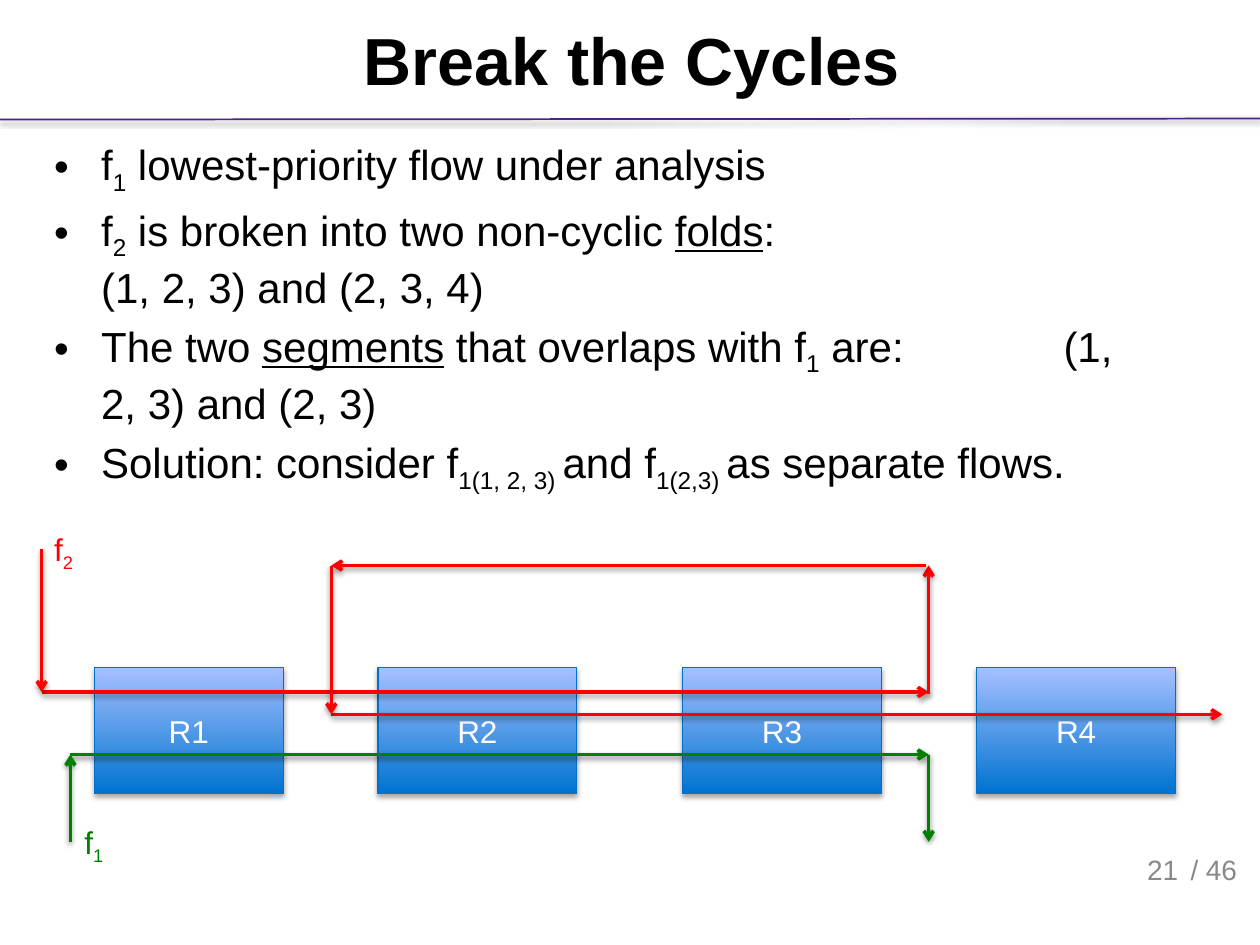
from typing import NamedTuple

from lxml.etree import SubElement
from pptx import Presentation
from pptx.dml.color import RGBColor
from pptx.enum.shapes import MSO_CONNECTOR as Connector, MSO_SHAPE as Shape
from pptx.enum.text import MSO_ANCHOR as Anchor, MSO_AUTO_SIZE as AutoSize, PP_ALIGN as Align
from pptx.oxml.ns import qn
from pptx.util import Cm, Pt

RED, GREEN, BLACK, GREY, WHITE = "FF0000", "008000", "000000", "898989", "FFFFFF"
ROUTER_TOP, ROUTER_HEIGHT = 13.46, 2.54
LEFT_TURN, RIGHT_TURN = 6.68, 18.72
LOOP_TOP, FIRST_PASS, SECOND_PASS = 11.4, 13.95, 14.4
F1_LEVEL, F1_END = 15.21, 16.97
F1_START, F2_START = 1.42, 0.84


class Span(NamedTuple):
    text: str
    sub: bool = False
    underline: bool = False


class Router(NamedTuple):
    name: str
    left: float
    width: float = 4.01


class Arrow(NamedTuple):
    color: str
    x1: float
    y1: float
    x2: float
    y2: float


class Label(NamedTuple):
    spans: list[Span]
    left: float
    top: float
    width: float
    size: int
    color: str
    align: Align = Align.LEFT
    anchor: Anchor = Anchor.TOP
    wrap: bool = True


BULLETS = [
    [Span("f"), Span("1", sub=True), Span(" lowest-priority flow under analysis")],
    [Span("f"), Span("2", sub=True), Span(" is broken into two non-cyclic "),
     Span("folds", underline=True), Span(":"), Span("\n"), Span("(1, 2, 3) and (2, 3, 4)")],
    [Span("The two "), Span("segments", underline=True), Span(" that overlaps with f"),
     Span("1", sub=True), Span(" are:\t(1,"), Span("\n"), Span("2, 3) and (2, 3)")],
    [Span("Solution: consider f"), Span("1(1, 2, 3) ", sub=True), Span("and f"),
     Span("1(2,3) ", sub=True), Span("as separate flows.")],
]
ROUTERS = [Router("R1", 1.9, 3.81), Router("R2", 7.62), Router("R3", 13.76), Router("R4", 19.69)]
ARROWS = [
    Arrow(RED, F2_START, FIRST_PASS, RIGHT_TURN, FIRST_PASS),
    Arrow(RED, F2_START, 11.07, F2_START, FIRST_PASS),
    Arrow(RED, RIGHT_TURN, 14, RIGHT_TURN, LOOP_TOP),
    Arrow(GREEN, F1_START, F1_LEVEL, RIGHT_TURN, F1_LEVEL),
    Arrow(GREEN, F1_START, F1_END, F1_START, F1_LEVEL),
    Arrow(GREEN, RIGHT_TURN, F1_LEVEL, RIGHT_TURN, F1_END),
    Arrow(RED, LEFT_TURN, SECOND_PASS, 24.64, SECOND_PASS),
    Arrow(RED, RIGHT_TURN - 0.05, LOOP_TOP, LEFT_TURN, LOOP_TOP),
    Arrow(RED, LEFT_TURN, LOOP_TOP, LEFT_TURN, SECOND_PASS),
]
LABELS = [
    Label([Span("/ 46")], 23.75, 16.97, 2.69, 16, GREY, anchor=Anchor.BOTTOM),
    Label([Span("21")], 21.31, 16.97, 2.69, 16, GREY, Align.RIGHT, Anchor.BOTTOM),
    Label([Span("f"), Span("2", sub=True)], 0.84, 10.57, 0.94, 18, RED, wrap=False),
    Label([Span("f"), Span("1", sub=True)], 1.45, 16.46, 0.94, 18, GREEN, wrap=False),
]


def rgb(color: str) -> RGBColor:
    return RGBColor.from_string(color)


def set_font(para, size: int, color: str, bold: bool = False) -> None:
    font = para.font
    font.name, font.size, font.bold = "Arial", Pt(size), bold
    font.color.rgb = rgb(color)


def add_spans(para, spans: list[Span]) -> None:
    for span in spans:
        if span.text == "\n":
            para.add_line_break()
            continue
        run = para.add_run()
        run.text = span.text
        if span.underline:
            run.font.underline = True
        if span.sub:
            run.font._element.set("baseline", "-25000")


def add_shadow(shape, opacity: int, distance: float) -> None:
    effects = SubElement(shape._element.spPr, qn("a:effectLst"))
    shadow = SubElement(effects, qn("a:outerShdw"), blurRad=str(Pt(3.1)),
                        dist=str(Pt(distance)), dir="5400000", rotWithShape="0")
    color = SubElement(shadow, qn("a:srgbClr"), val=BLACK)
    SubElement(color, qn("a:alpha"), val=str(opacity * 1000))


def add_line(page, line: Arrow, width: float):
    connector = page.shapes.add_connector(
        Connector.STRAIGHT, Cm(line.x1), Cm(line.y1), Cm(line.x2), Cm(line.y2))
    connector.line.color.rgb = rgb(line.color)
    connector.line.width = Pt(width)
    return connector


def add_arrow(page, arrow: Arrow) -> None:
    connector = add_line(page, arrow, 2)
    SubElement(connector.line._get_or_add_ln(), qn("a:tailEnd"), type="arrow")
    add_shadow(connector, 38, 1.6)


def add_router(page, router: Router) -> None:
    box = page.shapes.add_shape(Shape.RECTANGLE, Cm(router.left), Cm(ROUTER_TOP),
                                Cm(router.width), Cm(ROUTER_HEIGHT))
    box.fill.gradient()
    box.fill.gradient_angle = 90
    for stop, color, position in zip(box.fill.gradient_stops, ("0073CF", "A6C0FF"), (0, 1)):
        stop.color.rgb = rgb(color)
        stop.position = position
    box.line.color.rgb = rgb("0070CA")
    box.line.width = Pt(0.75)
    add_shadow(box, 35, 1.8)
    box.text_frame.vertical_anchor = Anchor.MIDDLE
    para = box.text_frame.paragraphs[0]
    para.text = router.name
    para.alignment = Align.CENTER
    set_font(para, 18, WHITE)


def add_label(page, label: Label) -> None:
    box = page.shapes.add_textbox(Cm(label.left), Cm(label.top), Cm(label.width), Cm(1.02))
    frame = box.text_frame
    frame.word_wrap = label.wrap
    frame.vertical_anchor = label.anchor
    if not label.wrap:
        frame.auto_size = AutoSize.SHAPE_TO_FIT_TEXT
    para = frame.paragraphs[0]
    add_spans(para, label.spans)
    para.alignment = label.align
    set_font(para, label.size, label.color)


def add_bullets(page) -> None:
    frame = page.shapes.add_textbox(Cm(0.84), Cm(2.67), Cm(22.86), Cm(7.9)).text_frame
    frame.word_wrap = True
    for index, spans in enumerate(BULLETS):
        para = frame.add_paragraph() if index else frame.paragraphs[0]
        if index:
            para.space_before = Pt(4.8)
        props = para._p.get_or_add_pPr()
        props.set("marL", str(Cm(0.95)))
        props.set("indent", str(Cm(-0.95)))
        SubElement(props, qn("a:buFont"), typeface="Arial")
        SubElement(props, qn("a:buChar"), char="•")
        if any("\t" in span.text for span in spans):
            tabs = SubElement(props, qn("a:tabLst"))
            SubElement(tabs, qn("a:tab"), pos=str(Cm(20.35)), algn="l")
        add_spans(para, spans)
        set_font(para, 24, BLACK)


def add_title(page) -> None:
    title = page.shapes.title
    title.left, title.top, title.width, title.height = Cm(0.84), Cm(0), Cm(23.8), Cm(2.39)
    title.text_frame.vertical_anchor = Anchor.MIDDLE
    para = title.text_frame.paragraphs[0]
    para.text = "Break the Cycles"
    para.alignment = Align.CENTER
    set_font(para, 38, BLACK, bold=True)


def main() -> None:
    deck = Presentation()
    deck.slide_width, deck.slide_height = Cm(25.4), Cm(19.05)
    page = deck.slides.add_slide(deck.slide_layouts[5])
    add_title(page)
    add_line(page, Arrow("4A2384", 0, 2.41, 25.4, 2.39), 1)
    add_bullets(page)
    for router in ROUTERS:
        add_router(page, router)
    for arrow in ARROWS:
        add_arrow(page, arrow)
    for label in LABELS:
        add_label(page, label)
    deck.save("out.pptx")


if __name__ == "__main__":
    main()
